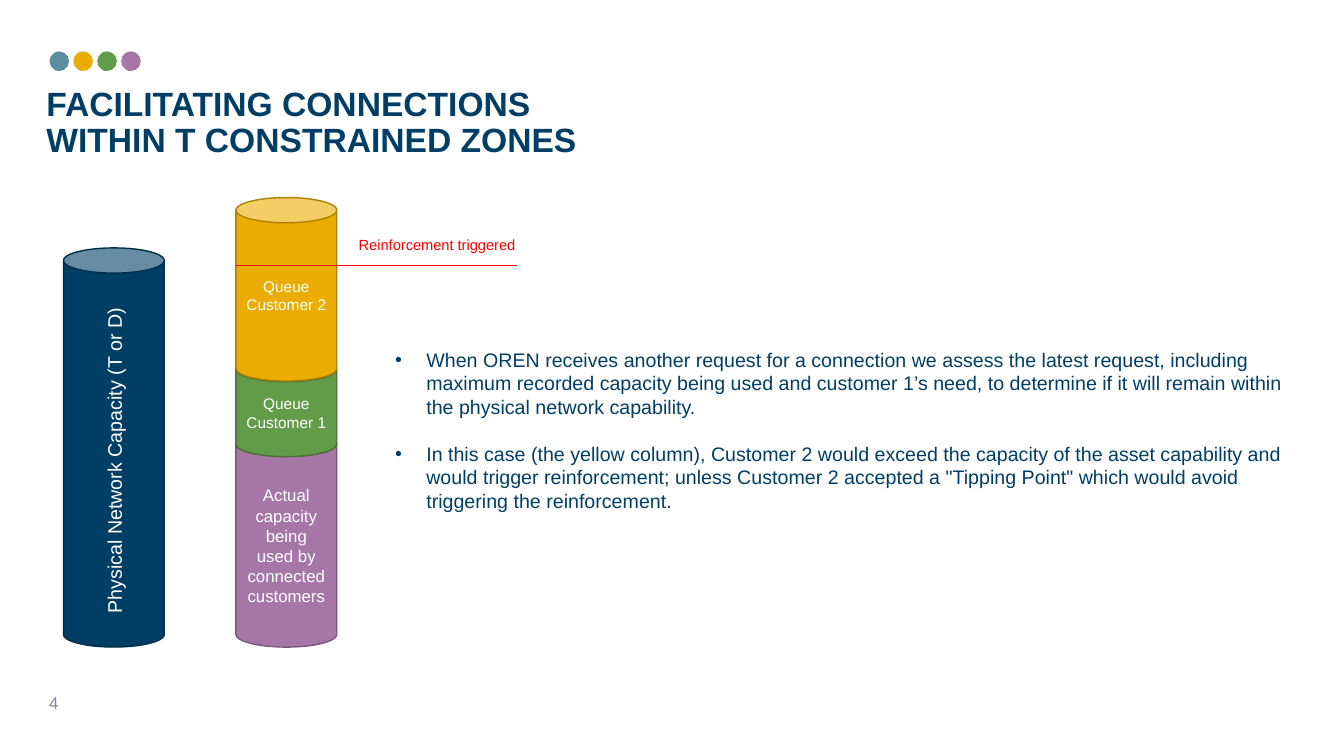
from lxml.etree import SubElement
from pptx import Presentation
from pptx.dml.color import RGBColor
from pptx.enum.shapes import MSO_CONNECTOR, MSO_SHAPE
from pptx.enum.text import MSO_ANCHOR, PP_ALIGN
from pptx.oxml.ns import qn
from pptx.util import Inches, Pt

NAVY, YELLOW, GREEN, PURPLE = "003E66", "EBAC00", "629C49", "A677A6"
TEAL, WHITE, RED, GREY = "5B8E9F", "FFFFFF", "FF0000", "808999"
CAN_W, CAPACITY_X, QUEUE_X = 1, 0.63, 2.34
CAN_BOTTOM = 6.42


def paint(color_format, color):
    """Set a fill, line or font colour from a hex string."""
    color_format.rgb = RGBColor.from_string(color)


def write(sp, paragraphs, size, color, **formats):
    """Fill a shape with paragraphs; formats apply to each run's font."""
    tf = sp.text_frame
    for i, text in enumerate(paragraphs):
        p = tf.paragraphs[0] if i == 0 else tf.add_paragraph()
        r = p.add_run()
        r.text = text
        for name, value in {"name": "Arial", "size": Pt(size), **formats}.items():
            setattr(r.font, name, value)
        paint(r.font.color, color)
    return tf


prs = Presentation()
prs.slide_width, prs.slide_height = Inches(13.33), Inches(7.5)
s = prs.slides.add_slide(prs.slide_layouts[6])

# Row of dots above the title
for i, color in enumerate([TEAL, YELLOW, GREEN, PURPLE]):
    sp = s.shapes.add_shape(MSO_SHAPE.OVAL, Inches(0.49 + i * 0.237), Inches(0.51),
                            Inches(0.195), Inches(0.195))
    sp.shadow.inherit = False
    sp.fill.solid()
    paint(sp.fill.fore_color, color)
    sp.line.fill.background()

# Capacity column, then the queue stacked from the bottom up
cans = [
    (CAPACITY_X, 2.46, CAN_BOTTOM, NAVY, "002E4B", "", 14),
    (QUEUE_X, 4.28, CAN_BOTTOM, PURPLE, "7B587B",
     "Actual capacity being used by connected customers", 12),
    (QUEUE_X, 3.54, 4.53, GREEN, "497336", "Queue Customer 1", 11),
    (QUEUE_X, 1.96, 3.78, YELLOW, "B08100", "Queue Customer 2", 11),
]
for x, top, bottom, fill, edge, label, size in cans:
    sp = s.shapes.add_shape(MSO_SHAPE.CAN, Inches(x), Inches(top),
                            Inches(CAN_W), Inches(bottom - top))
    sp.shadow.inherit = False
    sp.fill.solid()
    paint(sp.fill.fore_color, fill)
    paint(sp.line.color, edge)
    sp.line.width = Pt(1)
    if label:
        tf = write(sp, [label], size, WHITE)
        tf.word_wrap, tf.vertical_anchor = True, MSO_ANCHOR.MIDDLE
        tf.paragraphs[0].alignment = PP_ALIGN.CENTER

# Title
sp = s.shapes.add_textbox(Inches(0.46), Inches(0.87), Inches(5.79), Inches(0.76))
tf = write(sp, ["FACILITATING CONNECTIONS WITHIN T CONSTRAINED ZONES"], 24, NAVY, bold=True)
tf.word_wrap = True
for side in ("left", "top", "right", "bottom"):
    setattr(tf, f"margin_{side}", 0)
tf.paragraphs[0].line_spacing = 0.9

# One-line labels
labels = [
    ("4", 0.39, 6.82, 0.73, 0.3, 0, 12, GREY, True),
    ("Physical Network Capacity (T or D)", -0.49, 4.39, 3.25, 0.34, 270, 14, WHITE, False),
    ("Reinforcement triggered", 3.46, 2.29, 1.86, 0.29, 0, 10.5, RED, False),
]
for text, x, y, w, h, rotation, size, color, wrap in labels:
    sp = s.shapes.add_textbox(Inches(x), Inches(y), Inches(w), Inches(h))
    sp.rotation = rotation
    write(sp, [text], size, color).word_wrap = wrap

# Explanation
sp = s.shapes.add_textbox(Inches(3.82), Inches(3.4), Inches(9.18), Inches(1.99))
tf = write(sp, [
    "When OREN receives another request for a connection we assess the latest request, "
    "including maximum recorded capacity being used and customer 1’s need, to determine "
    "if it will remain within the physical network capability.",
    "In this case (the yellow column), Customer 2 would exceed the capacity of the asset "
    "capability and would trigger reinforcement; unless Customer 2 accepted a "
    "\"Tipping Point\" which would avoid triggering the reinforcement.",
], 14, NAVY)
tf.word_wrap = True
for i, p in enumerate(tf.paragraphs):
    p.space_before = Pt(16.8 * i)
    pPr = p._p.get_or_add_pPr()
    pPr.set("marL", str(Inches(0.31)))
    pPr.set("indent", str(-Inches(0.31)))
    SubElement(pPr, qn("a:buFont")).set("typeface", "Arial")
    SubElement(pPr, qn("a:buChar")).set("char", "•")

# Reinforcement threshold
line = s.shapes.add_connector(MSO_CONNECTOR.STRAIGHT, Inches(QUEUE_X), Inches(2.63),
                              Inches(5.13), Inches(2.63))
paint(line.line.color, RED)
line.line.width = Pt(0.5)
SubElement(line._element.spPr, qn("a:effectLst"))

prs.save("out.pptx")
